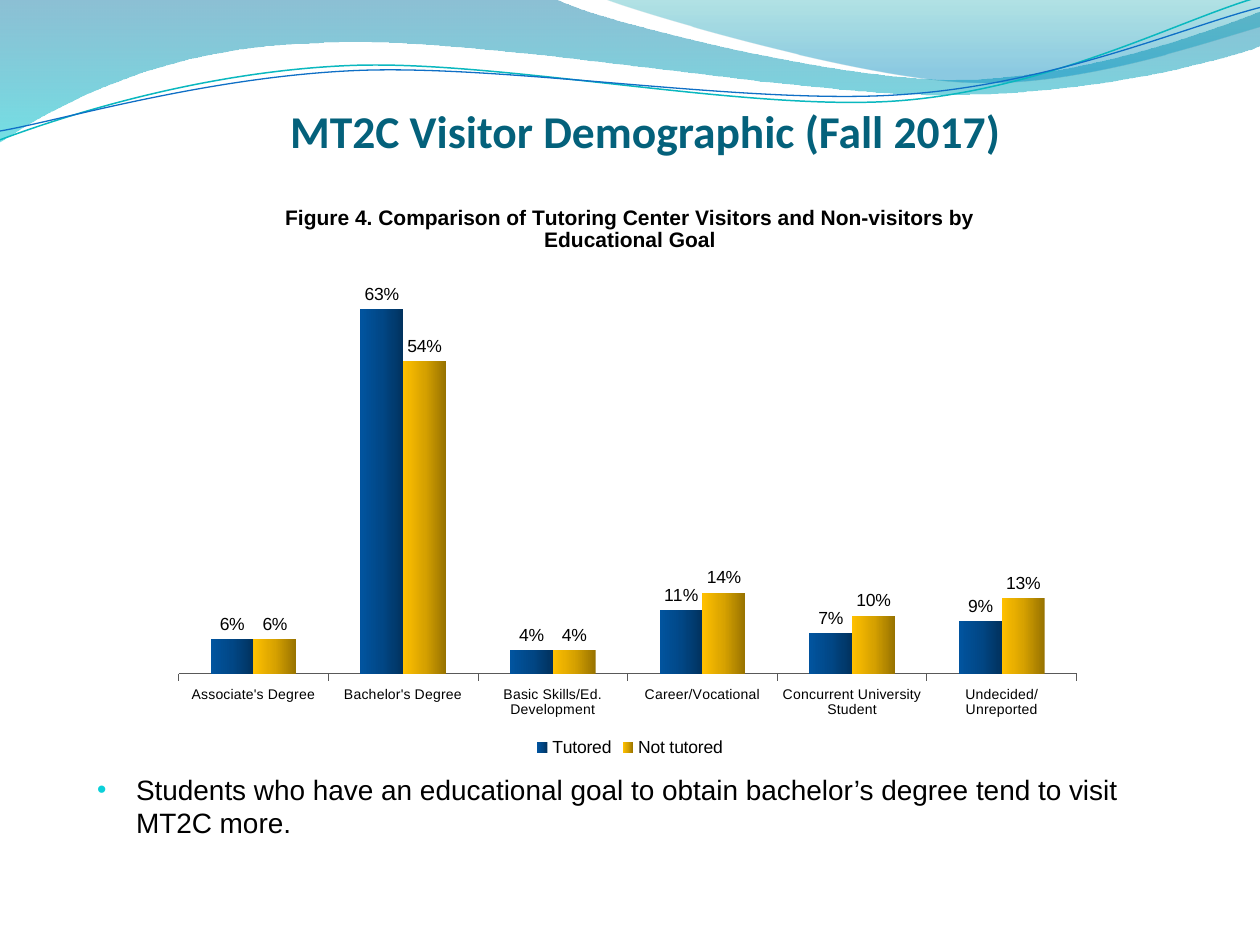
from math import cos, radians, sin

from lxml.etree import SubElement
from pptx import Presentation
from pptx.chart.data import CategoryChartData
from pptx.dml.color import RGBColor
from pptx.enum.chart import XL_CHART_TYPE as ChartType, XL_LABEL_POSITION as LabelPosition
from pptx.enum.chart import XL_LEGEND_POSITION as LegendPosition, XL_TICK_MARK as TickMark
from pptx.enum.text import MSO_ANCHOR as Anchor, PP_ALIGN as Align
from pptx.oxml.ns import qn
from pptx.util import Inches, Pt

TITLE = "MT2C Visitor Demographic (Fall 2017)"
FINDING = ("Students who have an educational goal to obtain bachelor’s degree "
           "tend to visit MT2C more.")
FIGURE_TITLE = ("Figure 4. Comparison of Tutoring Center Visitors and "
                "Non-visitors by Educational Goal")
GOALS = ["Associate's Degree", "Bachelor's Degree", "Basic Skills/Ed. Development",
         "Career/Vocational", "Concurrent University Student", "Undecided/Unreported"]
GROUPS = [
    ("Tutored", [0.06, 0.63, 0.04, 0.11, 0.07, 0.09],
     [(0, "01325E", 100), (50, "014786", 100), (100, "01549F", 100)]),
    ("Not tutored", [0.06, 0.54, 0.04, 0.14, 0.10, 0.13],
     [(0, "977200", 100), (50, "D7A200", 100), (100, "FFC000", 100)]),
]
PLOT_PERCENT = {"x": 0.8, "y": 14.9, "w": 97.9, "h": 69.8}
WAVES = [
    ([(0, 0), (4.4, -0.01), (4.76, 0.17, 6.64, 0.63, 7.58, 0.63),
      (8.53, 0.63, 9.58, 0.26, 10, 0.09), (10.01, 0.36),
      (9.83, 0.44, 8.7, 0.76, 7.46, 0.75), (6.22, 0.75, 3.82, 0.28, 2.57, 0.34),
      (1.29, 0.36, 0.46, 0.83, -0.01, 1.13), (0, 0)],
     [(0, "0074A1", 45), (100, "00C6CF", 55)]),
    ([(4.79, -0.01), (5.09, 0.11, 6.82, 0.62, 7.69, 0.65),
      (8.56, 0.69, 9.61, 0.32, 10, 0.21), (10, 0), (4.79, -0.01)],
     [(0, "00A1A9", 30), (80, "008BBF", 45)]),
]
STRANDS = [
    ([(0, 1.11), (0.48, 0.93, 1.58, 0.57, 2.77, 0.52),
      (3.95, 0.47, 5.93, 0.89, 7.13, 0.8), (8.33, 0.71, 9.38, 0.15, 9.98, -0.02)],
     (4.99, 0.58), "0AB8BF", 0.85),
    ([(0, 1.04), (0.47, 0.96, 1.64, 0.61, 2.83, 0.56),
      (4.03, 0.51, 5.97, 0.84, 7.17, 0.75), (8.36, 0.67, 9.41, 0.21, 10, 0.06)],
     (5, 0.59), "0F6FC6", 0.75),
]
STRAND_TILT = -2.7


def color(hex_code):
    return RGBColor.from_string(hex_code)


def style(font, size, hex_code="000000", name="Arial", bold=False):
    font.name, font.size, font.bold = name, Pt(size), bold
    font.color.rgb = color(hex_code)


def set_gradient(fill, properties, stops, angle):
    fill.gradient()
    gradient = properties.find(qn("a:gradFill"))
    gradient.clear()
    stop_list = SubElement(gradient, qn("a:gsLst"))
    for position, hex_code, opacity in stops:
        stop = SubElement(stop_list, qn("a:gs"), pos=str(position * 1000))
        tone = SubElement(stop, qn("a:srgbClr"), val=hex_code)
        if opacity < 100:
            SubElement(tone, qn("a:alpha"), val=str(opacity * 1000))
    SubElement(gradient, qn("a:lin"), ang=str(angle * 60000), scaled="0")


def turn(segment, center, degrees):
    c, s = cos(radians(degrees)), sin(radians(degrees))
    turned = []
    for x, y in zip(segment[::2], segment[1::2]):
        dx, dy = x - center[0], y - center[1]
        turned += [center[0] + dx * c - dy * s, center[1] + dx * s + dy * c]
    return turned


def add_outline(slide, segments, close):
    points = [(Inches(x), Inches(y)) for segment in segments
              for x, y in zip(segment[::2], segment[1::2])]
    builder = slide.shapes.build_freeform(*points[0])
    builder.add_line_segments(points[1:], close=close)
    outline = builder.convert_to_shape()
    outline.shadow.inherit = False

    steps = iter(list(outline._element.iter(qn("a:lnTo"))))
    for segment in segments[1:]:
        step = next(steps)
        if len(segment) == 6:
            curve = step.getparent().makeelement(qn("a:cubicBezTo"), {})
            step.addprevious(curve)
            for vertex in (step, next(steps), next(steps)):
                curve.append(vertex[0])
                vertex.getparent().remove(vertex)
    return outline


def add_text(slide, box, text, margins, anchor):
    frame = slide.shapes.add_textbox(*map(Inches, box)).text_frame
    frame.word_wrap = True
    frame.vertical_anchor = anchor
    (frame.margin_left, frame.margin_top,
     frame.margin_right, frame.margin_bottom) = map(Inches, margins)
    frame.text = text
    return frame.paragraphs[0]


def add_bullet(paragraph):
    properties = paragraph._p.get_or_add_pPr()
    indent = Inches(0.31)
    properties.set("marL", str(indent))
    properties.set("indent", str(-indent))
    bullet_color = SubElement(properties, qn("a:buClr"))
    SubElement(bullet_color, qn("a:srgbClr"), val="0BD0D9")
    SubElement(properties, qn("a:buSzPct"), val="95000")
    SubElement(properties, qn("a:buFont"), typeface="Arial")
    SubElement(properties, qn("a:buChar"), char="•")


def set_plot_layout(chart):
    plot_area = chart._chartSpace.chart.plotArea
    layout = plot_area.find(qn("c:layout"))
    if layout is None:
        layout = SubElement(plot_area, qn("c:layout"))
        plot_area.insert(0, layout)
    manual = SubElement(layout, qn("c:manualLayout"))
    for tag, value in (("layoutTarget", "inner"), ("xMode", "edge"), ("yMode", "edge")):
        SubElement(manual, qn(f"c:{tag}"), val=value)
    for tag, percent in PLOT_PERCENT.items():
        SubElement(manual, qn(f"c:{tag}"), val=str(percent / 100))


def add_goal_chart(slide):
    data = CategoryChartData(number_format="0%")
    data.categories = GOALS
    for name, shares, _ in GROUPS:
        data.add_series(name, shares)
    chart = slide.shapes.add_chart(ChartType.COLUMN_CLUSTERED,
                                   *map(Inches, (1.36, 1.45, 7.28, 4.6)), data).chart
    style(chart.font, 10)
    chart.has_title = True
    chart.chart_title.text_frame.text = FIGURE_TITLE
    style(chart.chart_title.text_frame.paragraphs[0].runs[0].font, 12, bold=True)
    chart.has_legend = True
    chart.legend.position = LegendPosition.BOTTOM
    chart.legend.include_in_layout = False
    style(chart.legend.font, 10)

    goal_axis, share_axis = chart.category_axis, chart.value_axis
    goal_axis.major_tick_mark = TickMark.OUTSIDE
    goal_axis.has_major_gridlines = False
    goal_axis.format.line.color.rgb = color("595959")
    goal_axis.format.line.width = Pt(0.5)
    style(goal_axis.tick_labels.font, 8)
    share_axis.has_major_gridlines = False
    share_axis.minimum_scale, share_axis.maximum_scale = 0, 0.7
    share_axis.visible = False

    plot = chart.plots[0]
    plot.gap_width, plot.overlap = 150, 0
    plot.vary_by_categories = False
    for series, (_, _, stops) in zip(plot.series, GROUPS):
        fill = series.format.fill
        set_gradient(fill, series._element.find(qn("c:spPr")), stops, 180)
        labels = series.data_labels
        labels.show_value = True
        labels.position = LabelPosition.OUTSIDE_END
        labels.number_format, labels.number_format_is_linked = "0%", False
        style(labels.font, 10)
    set_plot_layout(chart)


def main():
    deck = Presentation()
    deck.slide_width, deck.slide_height = Inches(10), Inches(7.5)
    slide = deck.slides.add_slide(deck.slide_layouts[6])

    for segments, stops in WAVES:
        wave = add_outline(slide, segments, close=True)
        wave.line.fill.background()
        set_gradient(wave.fill, wave._element.spPr, stops, 90)
    for segments, center, hex_code, width in STRANDS:
        level = [turn(segment, center, -STRAND_TILT) for segment in segments]
        strand = add_outline(slide, level, close=False)
        strand.rotation = STRAND_TILT
        strand.fill.background()
        strand.line.color.rgb = color(hex_code)
        strand.line.width = Pt(width)

    title = add_text(slide, (0.75, 0.67, 8.75, 0.58), TITLE, (0, 0.05, 0, 0), Anchor.BOTTOM)
    title.alignment = Align.CENTER
    style(title.runs[0].font, 26, "04617B", "Calibri", True)

    finding = add_text(slide, (0.75, 6.08, 8.58, 0.75), FINDING,
                       (0.02, 0.05, 0.02, 0.05), Anchor.TOP)
    add_bullet(finding)
    style(finding.runs[0].font, 16)

    add_goal_chart(slide)
    deck.save("out.pptx")


if __name__ == "__main__":
    main()
